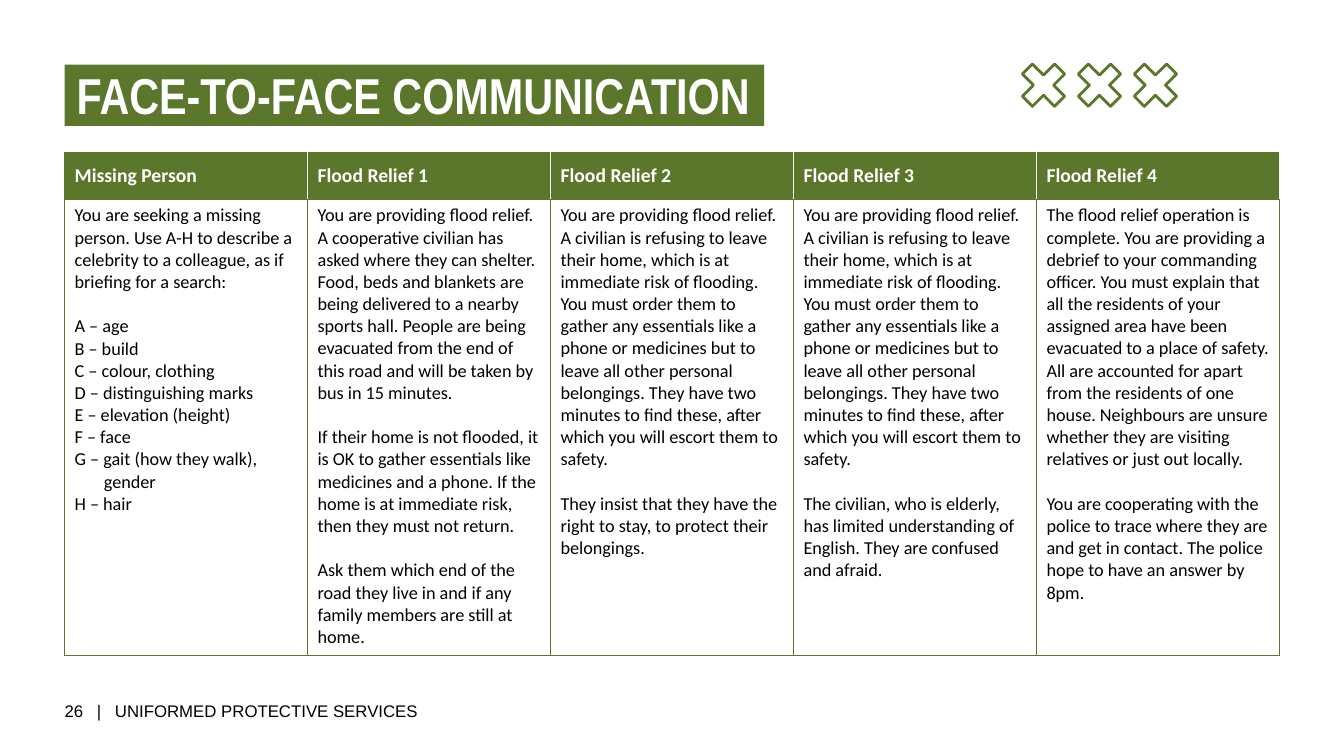
"""Build the face-to-face communication scenarios slide."""
from dataclasses import dataclass

from lxml import etree
from pptx import Presentation
from pptx import util as u
from pptx.dml.color import RGBColor
from pptx.enum import shapes, text
from pptx.oxml import ns


@dataclass(frozen=True)
class Theme:
    """Colours, fonts and type sizes of the slide."""

    green: str = "5B772B"
    white: str = "FFFFFF"
    black: str = "000000"
    title_font: str = "Arial Narrow"
    table_font: str = "Calibri"
    footer_font: str = "Arial"
    title_size: float = 36
    header_size: float = 14
    body_size: float = 13
    footer_size: float = 12
    body_gap: float = 15.9
    border: float = 0.5
    cross_line: float = 2


THEME = Theme()
LEFT = 0.64
REFUSAL = (
    "You are providing flood relief. A civilian is refusing to leave their home, "
    "which is at immediate risk of flooding. You must order them to gather any "
    "essentials like a phone or medicines but to leave all other personal belongings. "
    "They have two minutes to find these, after which you will escort them to safety."
)
DESCRIPTION = [
    "A – age",
    "B – build",
    "C – colour, clothing",
    "D – distinguishing marks",
    "E – elevation (height)",
    "F – face",
    "G – gait (how they walk), gender",
    "H – hair",
]
SCENARIOS = {
    "Missing Person": [
        "You are seeking a missing person. Use A-H to describe a celebrity to a "
        "colleague, as if briefing for a search:",
    ],
    "Flood Relief 1": [
        "You are providing flood relief. A cooperative civilian has asked where they "
        "can shelter. Food, beds and blankets are being delivered to a nearby sports "
        "hall. People are being evacuated from the end of this road and will be taken "
        "by bus in 15 minutes.",
        "If their home is not flooded, it is OK to gather essentials like medicines "
        "and a phone. If the home is at immediate risk, then they must not return.",
        "Ask them which end of the road they live in and if any family members are "
        "still at home.",
    ],
    "Flood Relief 2": [
        REFUSAL,
        "They insist that they have the right to stay, to protect their belongings.",
    ],
    "Flood Relief 3": [
        REFUSAL.replace("two minutes", "two minutes"),
        "The civilian, who is elderly, has limited understanding of English. They are "
        "confused and afraid.",
    ],
    "Flood Relief 4": [
        "The flood relief operation is complete. You are providing a debrief to your "
        "commanding officer. You must explain that all the residents of your assigned "
        "area have been evacuated to a place of safety. All are accounted for apart "
        "from the residents of one house. Neighbours are unsure whether they are "
        "visiting relatives or just out locally.",
        "You are cooperating with the police to trace where they are and get in "
        "contact. The police hope to have an answer by 8pm.",
    ],
}


def write(frame, words, *, font, size, color, bold=False, gap=0, hanging=0, tabs=()):
    """Write one paragraph into the frame, filling an empty first one."""
    para = frame.paragraphs[0]
    if para.runs:
        para = frame.add_paragraph()
    para.alignment = text.PP_ALIGN.LEFT
    properties = para._p.get_or_add_pPr()
    if hanging:
        properties.set("marL", str(u.Inches(hanging)))
        properties.set("indent", str(-u.Inches(hanging)))
    if tabs:
        stops = etree.SubElement(properties, ns.qn("a:tabLst"))
        for position in tabs:
            etree.SubElement(stops, ns.qn("a:tab"), pos=str(u.Inches(position)), algn="l")
    if gap:
        para.space_before = u.Pt(gap)
    span = para.add_run()
    span.text = words
    span.font.name = font
    span.font.size = u.Pt(size)
    span.font.bold = bold
    span.font.color.rgb = RGBColor.from_string(color)


def set_insets(frame, left=0, right=0):
    """Set the side insets of a frame and clear the others."""
    frame.margin_left, frame.margin_right = u.Inches(left), u.Inches(right)
    frame.margin_top = frame.margin_bottom = 0


def paint(target, color):
    """Give a shape or cell a solid fill."""
    target.fill.solid()
    target.fill.fore_color.rgb = RGBColor.from_string(color)


def add_title(page):
    """Add the green title bar."""
    bar = page.shapes.add_shape(
        shapes.MSO_SHAPE.RECTANGLE,
        u.Inches(LEFT), u.Inches(0.64), u.Inches(6.94), u.Inches(0.61),
    )
    bar.shadow.inherit = False
    paint(bar, THEME.green)
    bar.line.fill.background()
    frame = bar.text_frame
    frame.word_wrap = False
    frame.vertical_anchor = text.MSO_ANCHOR.TOP
    set_insets(frame, 0.12, 0.08)
    write(frame, "FACE-TO-FACE COMMUNICATION", font=THEME.title_font,
          size=THEME.title_size, color=THEME.white, bold=True)


def add_footer(page):
    """Add the page number and course name."""
    box = page.shapes.add_textbox(
        u.Inches(LEFT), u.Inches(6.95), u.Inches(3.82), u.Inches(0.2))
    frame = box.text_frame
    frame.word_wrap = True
    frame.vertical_anchor = text.MSO_ANCHOR.MIDDLE
    set_insets(frame)
    write(frame, "26\t|\tUNIFORMED PROTECTIVE SERVICES", font=THEME.footer_font,
          size=THEME.footer_size, color=THEME.black, tabs=(0.32, 0.5))


def add_crosses(page):
    """Draw the row of three outlined crosses as one outline shape."""
    corners = [(0.11, 0.21), (0.21, 0.11), (0.1, 0), (0.21, -0.11), (0.11, -0.21), (0, -0.1)]
    corners += [(-x, -y) for x, y in corners]
    builder = None
    for index in range(3):
        center = 10.35 + 0.555 * index
        points = [(u.Inches(center + x), u.Inches(0.845 + y)) for x, y in corners]
        if builder is None:
            builder = page.shapes.build_freeform(*points[0])
        else:
            builder.move_to(*points[0])
        builder.add_line_segments(points[1:], close=True)
    crosses = builder.convert_to_shape()
    crosses.shadow.inherit = False
    crosses.fill.background()
    crosses.line.color.rgb = RGBColor.from_string(THEME.green)
    crosses.line.width = u.Pt(THEME.cross_line)


def style_cell(cell, fill, left, right):
    """Set the borders and fill of a table cell."""
    properties = cell._tc.get_or_add_tcPr()
    sides = {"a:lnL": left, "a:lnR": right, "a:lnT": THEME.green, "a:lnB": THEME.green}
    for side, color in sides.items():
        line = etree.SubElement(properties, ns.qn(side), w=str(u.Pt(THEME.border)))
        solid = etree.SubElement(line, ns.qn("a:solidFill"))
        etree.SubElement(solid, ns.qn("a:srgbClr"), val=color)
    paint(cell, fill)


def add_scenarios(page):
    """Add the table with one scenario in each column."""
    table = page.shapes.add_table(
        2, len(SCENARIOS),
        u.Inches(LEFT), u.Inches(1.51), u.Inches(12.05), u.Inches(4.99),
    ).table
    table.rows[0].height, table.rows[1].height = u.Inches(0.47), u.Inches(4.52)
    body = dict(font=THEME.table_font, size=THEME.body_size, color=THEME.black)
    for column, (heading, paragraphs) in enumerate(SCENARIOS.items()):
        header, cell = table.cell(0, column), table.cell(1, column)
        style_cell(header, THEME.green, THEME.white if column else THEME.green, THEME.white)
        style_cell(cell, THEME.white, THEME.green, THEME.green)
        header.vertical_anchor = text.MSO_ANCHOR.MIDDLE
        write(header.text_frame, heading, font=THEME.table_font,
              size=THEME.header_size, color=THEME.white, bold=True)
        for index, words in enumerate(paragraphs):
            write(cell.text_frame, words, gap=THEME.body_gap if index else 0, **body)
    for index, words in enumerate(DESCRIPTION):
        write(table.cell(1, 0).text_frame, words, hanging=0.29,
              gap=0 if index else THEME.body_gap, **body)


def main():
    """Build and save the deck."""
    deck = Presentation()
    deck.slide_width, deck.slide_height = u.Inches(13.33), u.Inches(7.5)
    page = deck.slides.add_slide(deck.slide_layouts[6])
    add_footer(page)
    add_title(page)
    add_scenarios(page)
    add_crosses(page)
    deck.save("out.pptx")


if __name__ == "__main__":
    main()
